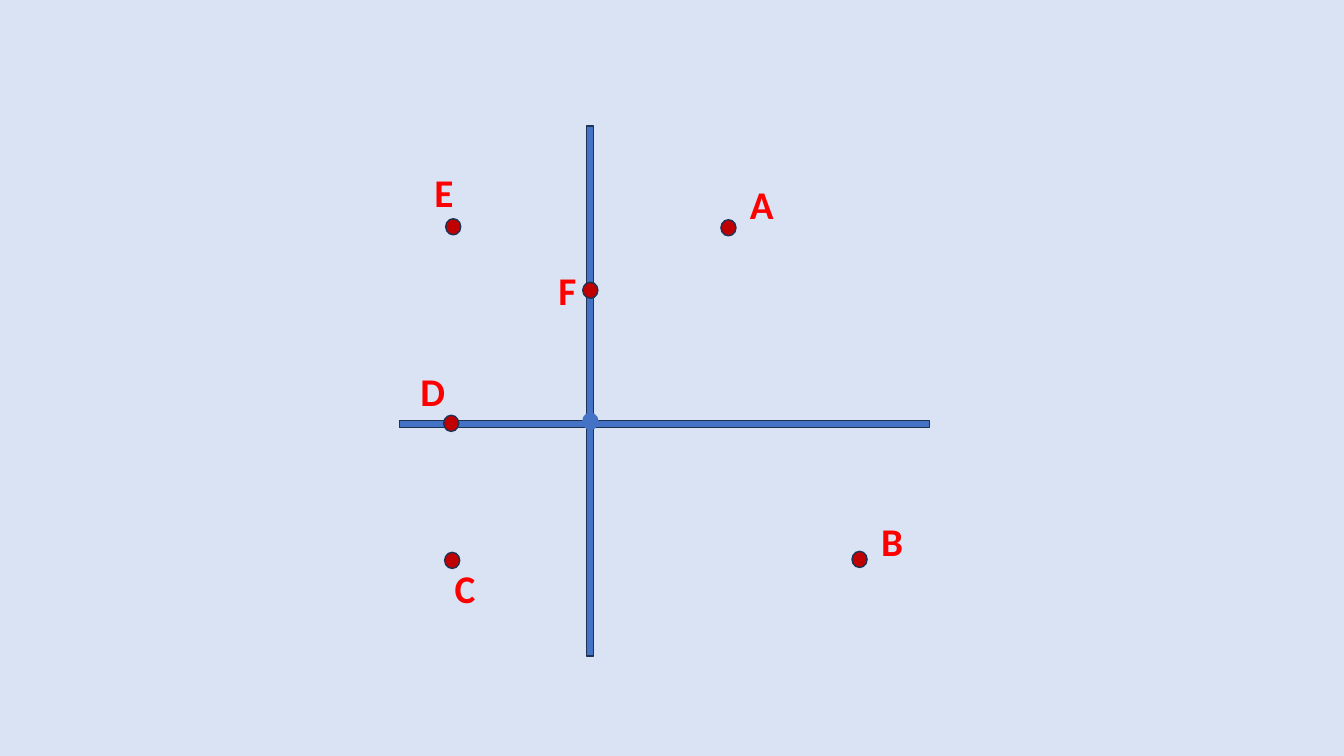
"""Build a slide with six labelled points on a pair of coordinate axes."""
from lxml.etree import SubElement
from pptx import Presentation
from pptx.dml.color import RGBColor
from pptx.enum.shapes import MSO_SHAPE
from pptx.enum.text import MSO_AUTO_SIZE, PP_ALIGN
from pptx.oxml.ns import qn
from pptx.util import Inches, Pt

BACKGROUND = RGBColor(0xDA, 0xE3, 0xF3)
AXIS_BLUE = RGBColor(0x44, 0x72, 0xC4)
EDGE_NAVY = RGBColor(0x1E, 0x32, 0x56)
POINT_RED = RGBColor(0xC0, 0x00, 0x00)
LETTER_RED = RGBColor(0xFF, 0x00, 0x00)
LETTER_EDGE = "FFFFFF"

AXIS_LENGTH, AXIS_THICKNESS = 5.26, 0.07
POINT_WIDTH, POINT_HEIGHT = 0.15, 0.16
LETTER_WIDTH, LETTER_HEIGHT = 0.34, 0.57

presentation = Presentation()
presentation.slide_width = Inches(13.33)
presentation.slide_height = Inches(7.5)
slide = presentation.slides.add_slide(presentation.slide_layouts[6])
slide.background.fill.solid()
slide.background.fill.fore_color.rgb = BACKGROUND


def add_mark(kind, left, top, width, height, fill, edge=EDGE_NAVY):
    mark = slide.shapes.add_shape(
        kind, Inches(left), Inches(top), Inches(width), Inches(height))
    mark.shadow.inherit = False
    mark.fill.solid()
    mark.fill.fore_color.rgb = fill
    mark.line.color.rgb = edge
    mark.line.width = Pt(1)


def add_letter(text, left, top, size=28, color=LETTER_RED, font="Calibri"):
    letter = slide.shapes.add_textbox(
        Inches(left), Inches(top), Inches(LETTER_WIDTH), Inches(LETTER_HEIGHT))
    letter.text_frame.word_wrap = True
    letter.text_frame.auto_size = MSO_AUTO_SIZE.SHAPE_TO_FIT_TEXT
    paragraph = letter.text_frame.paragraphs[0]
    paragraph.alignment = PP_ALIGN.CENTER
    run = paragraph.add_run()
    run.text = text
    run.font.size = Pt(size)
    run.font.bold = True
    run.font.name = font
    run.font.color.rgb = color
    properties = run.font._element
    outline = SubElement(properties, qn("a:ln"), w=str(Pt(0.75)))
    outline_fill = SubElement(outline, qn("a:solidFill"))
    SubElement(outline_fill, qn("a:srgbClr"), val=LETTER_EDGE)
    properties.insert(0, outline)


add_mark(MSO_SHAPE.RECTANGLE, 5.82, 1.25, AXIS_THICKNESS, AXIS_LENGTH, AXIS_BLUE)
add_mark(MSO_SHAPE.RECTANGLE, 3.96, 4.17, AXIS_LENGTH, AXIS_THICKNESS, AXIS_BLUE)
add_mark(MSO_SHAPE.OVAL, 5.78, 4.1, POINT_WIDTH, POINT_HEIGHT, AXIS_BLUE, AXIS_BLUE)

points = [
    ("A", (7.15, 2.18), (7.34, 1.74)),
    ("B", (8.45, 5.47), (8.64, 5.08)),
    ("C", (4.41, 5.48), (4.41, 5.55)),
    ("D", (4.4, 4.12), (4.07, 3.59)),
    ("E", (4.42, 2.17), (4.21, 1.62)),
    ("F", (5.78, 2.8), (5.44, 2.59)),
]
for name, point_corner, letter_corner in points:
    add_mark(MSO_SHAPE.OVAL, *point_corner, POINT_WIDTH, POINT_HEIGHT, POINT_RED)
    add_letter(name, *letter_corner)

presentation.save("out.pptx")
